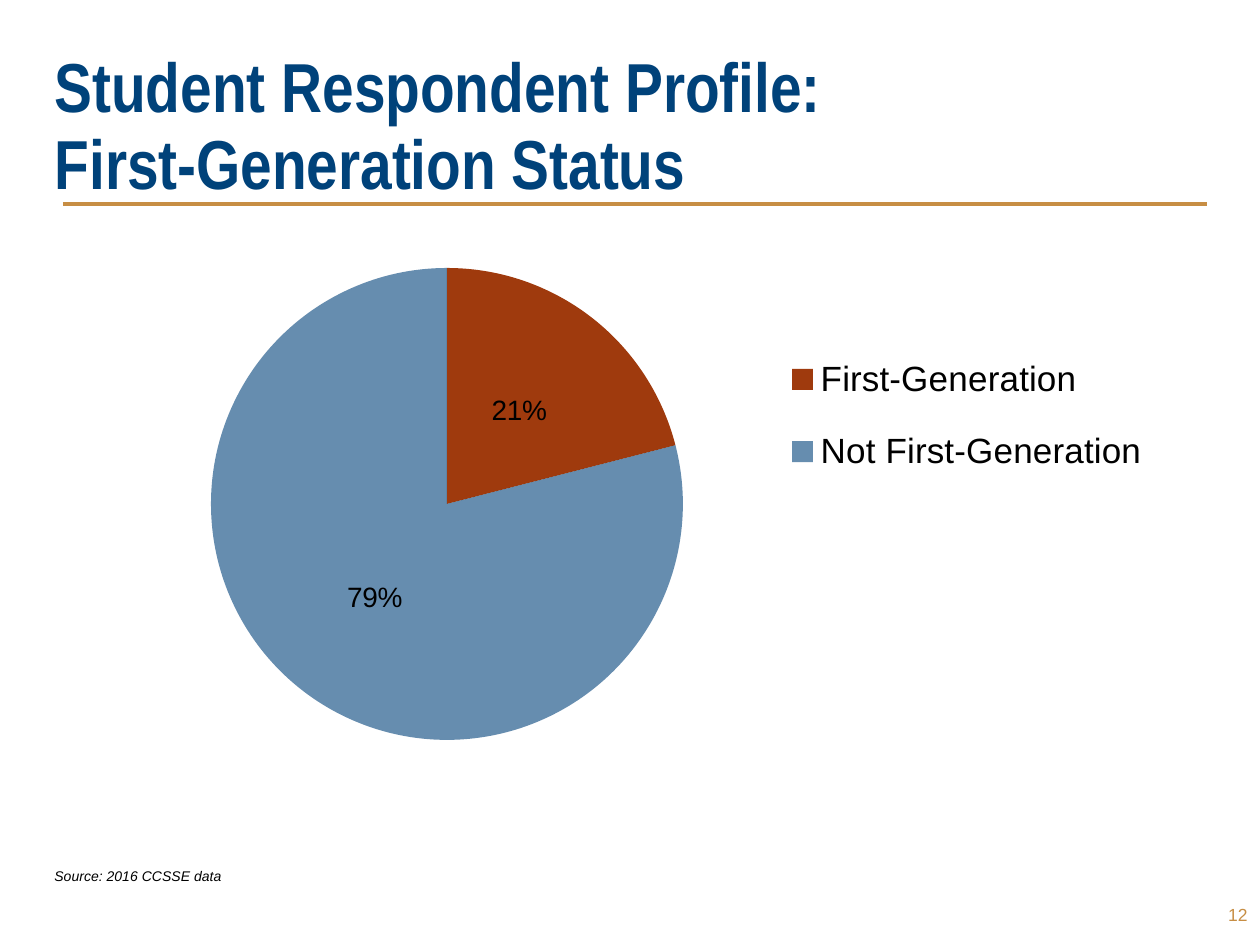
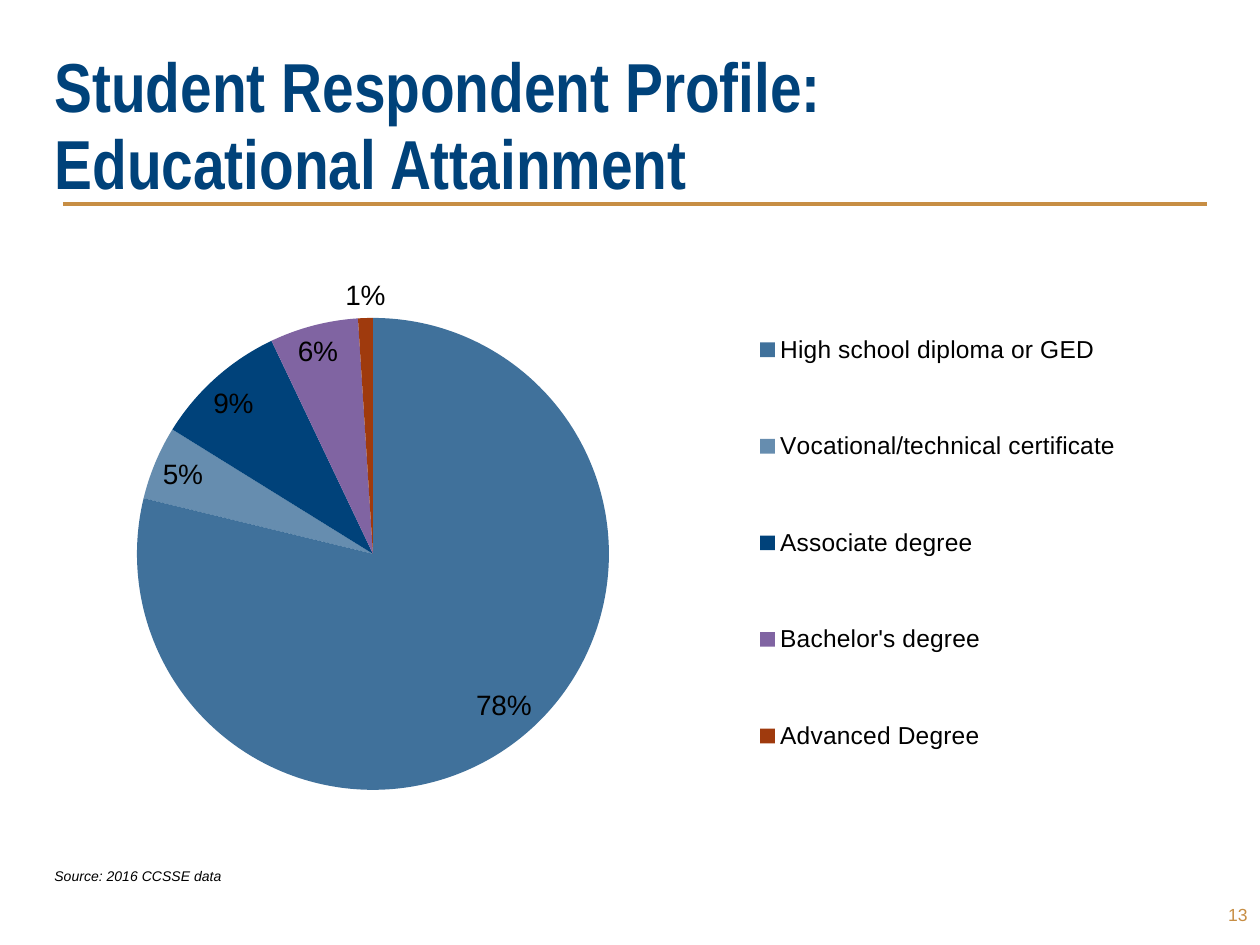
import dataclasses

import lxml.etree
import pptx
import pptx.chart.data
import pptx.dml.color
import pptx.enum.chart
import pptx.enum.shapes
import pptx.enum.text
import pptx.oxml.ns
import pptx.util

PX = 914400 // 126  # EMU in one px
qn = pptx.oxml.ns.qn
Position = pptx.enum.chart.XL_LABEL_POSITION
Align = pptx.enum.text.PP_ALIGN
Anchor = pptx.enum.text.MSO_ANCHOR


@dataclasses.dataclass(frozen=True)
class Theme:
    navy: str = "00427A"
    gold: str = "C78E44"
    rust: str = "9F3A0D"
    purple: str = "8064A2"
    black: str = "000000"
    title_font: str = "Arial Narrow"
    body_font: str = "Arial"
    title_size: float = 39.6
    title_leading: int = 44
    chart_size: int = 18
    label_size: int = 16
    number_size: int = 10
    source_size: int = 8


THEME = Theme()


def rgb(color):
    return pptx.dml.color.RGBColor.from_string(color)


def place(shape, box):
    shape.left, shape.top, shape.width, shape.height = (value * PX for value in box)


def style_font(font, size, color=THEME.black, name=THEME.body_font):
    font.size = pptx.util.Pt(size)
    font.name = name
    font.color.rgb = rgb(color)


def add_title(slide, lines):
    title = slide.shapes.title
    place(title, (42, 68, 1176, 142))
    frame = title.text_frame
    frame.auto_size = pptx.enum.text.MSO_AUTO_SIZE.NONE
    frame.vertical_anchor = Anchor.BOTTOM
    paragraph = frame.paragraphs[0]
    paragraph.alignment = Align.LEFT
    paragraph.line_spacing = pptx.util.Pt(THEME.title_leading)
    for index, line in enumerate(lines):
        if index:
            paragraph.add_line_break()
        run = paragraph.add_run()
        run.text = line
        style_font(run.font, THEME.title_size, THEME.navy, THEME.title_font)
        run.font.bold = True


def add_note(slide, box, text, size, color, align=Align.LEFT, anchor=Anchor.TOP, italic=False):
    left, top, width, height = (value * PX for value in box)
    frame = slide.shapes.add_textbox(left, top, width, height).text_frame
    frame.word_wrap = True
    frame.vertical_anchor = anchor
    paragraph = frame.paragraphs[0]
    paragraph.alignment = align
    run = paragraph.add_run()
    run.text = text
    style_font(run.font, size, color)
    run.font.italic = italic


def add_layout_rule(slide):
    """Draw the gold rule, then move it to the layout all slides share."""
    rule = slide.shapes.add_connector(
        pptx.enum.shapes.MSO_CONNECTOR.STRAIGHT, 63 * PX, 204 * PX, 1207 * PX, 204 * PX)
    rule.line.color.rgb = rgb(THEME.gold)
    rule.line.width = pptx.util.Pt(2.25)
    lxml.etree.SubElement(rule.element.spPr, qn("a:effectLst"))
    rule.element.nvCxnSpPr.cNvPr.set("id", "20")
    slide.slide_layout.shapes.element.append(rule.element)


def set_layout(parent, index, chart_box, box, inner=False):
    """Fix a chart part at a px box, written as fractions of the chart."""
    for old in parent.findall(qn("c:layout")):
        parent.remove(old)
    layout = lxml.etree.Element(qn("c:layout"))
    manual = lxml.etree.SubElement(layout, qn("c:manualLayout"))
    left, top, width, height = chart_box
    settings = [("layoutTarget", "inner")] if inner else []
    settings += [("xMode", "edge"), ("yMode", "edge"),
                 ("x", (box[0] - left) / width), ("y", (box[1] - top) / height),
                 ("w", box[2] / width), ("h", box[3] / height)]
    for tag, value in settings:
        text = value if isinstance(value, str) else f"{value:.4f}"
        lxml.etree.SubElement(manual, qn(f"c:{tag}")).set("val", text)
    parent.insert(index, layout)


def add_pie(slide, box, pie_box, legend_box, legend_size, label_position, slices):
    """Add a pie; each slice is (name, value, colour, opacity in percent)."""
    data = pptx.chart.data.CategoryChartData(number_format="0%")
    data.categories = [name for name, *_ in slices]
    data.add_series("Series 1", [value for _, value, *_ in slices])
    left, top, width, height = (value * PX for value in box)
    chart = slide.shapes.add_chart(
        pptx.enum.chart.XL_CHART_TYPE.PIE, left, top, width, height, data).chart
    chart.has_title = False
    style_font(chart.font, THEME.chart_size)

    # Slices
    plot = chart.plots[0]
    plot.vary_by_categories = True
    series = plot.series[0]
    for index, (_, _, color, opacity) in enumerate(slices):
        point = series.points[index]
        point.format.fill.solid()
        point.format.fill.fore_color.rgb = rgb(color)
        point.format.line.fill.background()
        if opacity < 100:
            fill = chart.element.findall(".//" + qn("c:dPt"))[index].find(".//" + qn("a:srgbClr"))
            lxml.etree.SubElement(fill, qn("a:alpha")).set("val", str(opacity * 1000))

    # Value labels
    labels = series.data_labels
    labels.show_value = True
    labels.show_percentage = False
    labels.number_format = "0%"
    labels.number_format_is_linked = False
    labels.position = label_position
    style_font(labels.font, THEME.label_size)

    # Legend and placement
    chart.has_legend = True
    legend = chart.legend
    legend.position = pptx.enum.chart.XL_LEGEND_POSITION.RIGHT
    legend.include_in_layout = False
    style_font(legend.font, legend_size)
    set_layout(chart.element.find(".//" + qn("c:plotArea")), 0, box, pie_box, inner=True)
    set_layout(chart.element.find(".//" + qn("c:legend")), 1, box, legend_box)


def add_profile_slide(presentation, number, topic):
    slide = presentation.slides.add_slide(presentation.slide_layouts[5])
    add_title(slide, ["Student Respondent Profile:", topic])
    add_note(slide, (1176, 893, 84, 44), str(number), THEME.number_size, THEME.gold,
             align=Align.RIGHT, anchor=Anchor.MIDDLE)
    add_note(slide, (42, 861, 252, 30), "Source: 2016 CCSSE data", THEME.source_size,
             THEME.black, italic=True)
    return slide


def main():
    presentation = pptx.Presentation()
    presentation.slide_width = 1260 * PX
    presentation.slide_height = 945 * PX

    # First-generation status
    generation = add_profile_slide(presentation, 12, "First-Generation Status")
    add_layout_rule(generation)
    add_pie(generation, (53, 136, 1144, 693), (211, 268, 472, 472), (767, 327, 400, 177),
            20, Position.CENTER, [
                ("First-Generation", 0.21, THEME.rust, 100),
                ("Not First-Generation", 0.79, THEME.navy, 60),
            ])

    # Educational attainment
    attainment = add_profile_slide(presentation, 13, "Educational Attainment")
    add_pie(attainment, (53, 242, 1144, 588), (137, 318, 472, 472), (738, 267, 400, 552),
            14, Position.BEST_FIT, [
                ("High school diploma or GED", 0.78, THEME.navy, 75),
                ("Vocational/technical certificate", 0.05, THEME.navy, 60),
                ("Associate degree", 0.09, THEME.navy, 100),
                ("Bachelor's degree", 0.06, THEME.purple, 100),
                ("Advanced Degree", 0.01, THEME.rust, 100),
            ])

    presentation.save("out.pptx")


if __name__ == "__main__":
    main()
